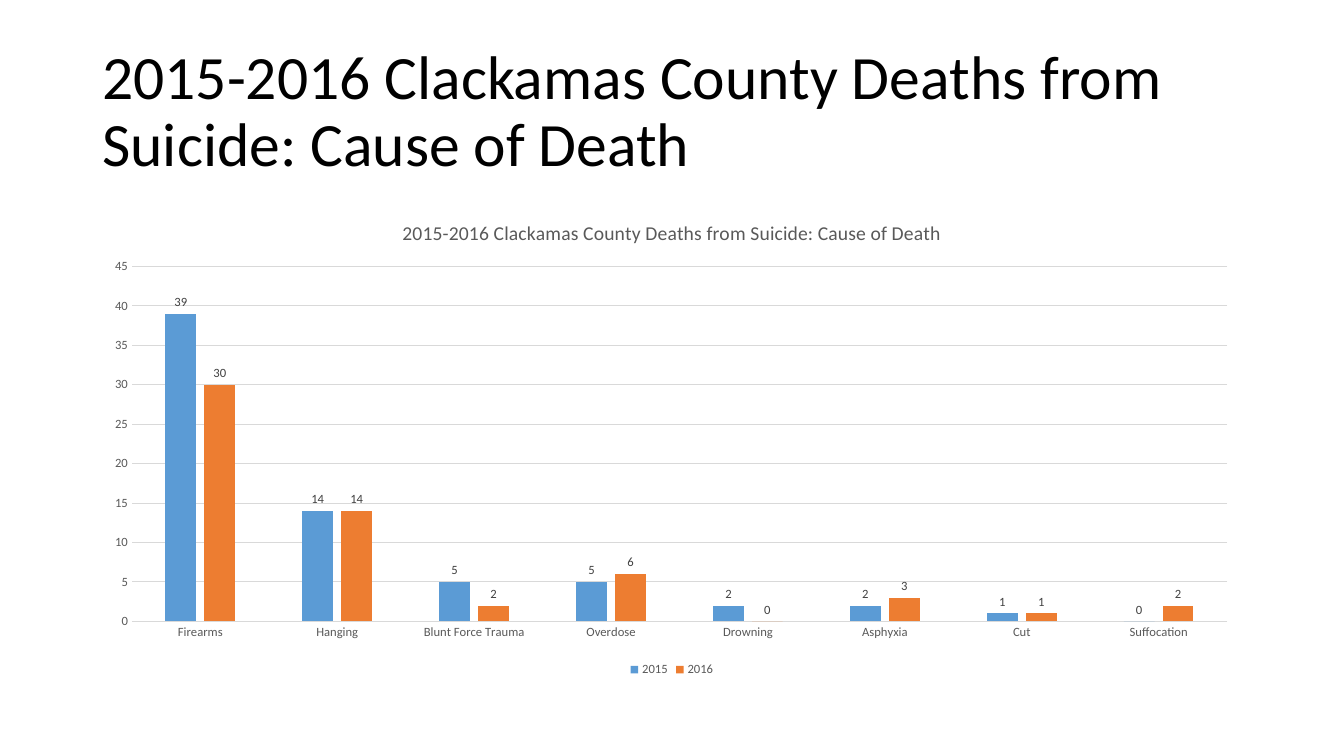
from dataclasses import dataclass

import pptx
import pptx.chart.data
import pptx.dml.color
import pptx.enum.chart
import pptx.enum.text
import pptx.oxml
import pptx.oxml.ns
import pptx.util
from pptx.util import Cm


@dataclass(frozen=True)
class Theme:
    font: str = "Calibri"
    ink: str = "000000"
    muted: str = "595959"
    label: str = "404040"
    rule: str = "D9D9D9"
    bars: tuple = ("5B9BD5", "ED7D31")
    heading_size: int = 44
    chart_title_size: int = 14
    chart_size: int = 10
    small_size: int = 9
    rule_width: float = 0.75


THEME = Theme()
HEADING = "2015-2016 Clackamas County Deaths from Suicide: Cause of Death"
CAUSES = ["Firearms", "Hanging", "Blunt Force Trauma", "Overdose",
          "Drowning", "Asphyxia", "Cut", "Suffocation"]
DEATHS = {
    "2015": [39, 14, 5, 5, 2, 2, 1, 0],
    "2016": [30, 14, 2, 6, 0, 3, 1, 2],
}
PLOT_AREA = {"x": 0.034, "y": 0.136, "w": 0.945, "h": 0.74}


def rgb(color):
    return pptx.dml.color.RGBColor.from_string(color)


def style_font(font, size, color):
    font.name = THEME.font
    font.size = pptx.util.Pt(size)
    font.bold = False
    font.color.rgb = rgb(color)


def write_text(frame, text, size, color, spacing=None):
    para = frame.paragraphs[0]
    para.line_spacing = spacing
    span = para.add_run()
    span.text = text
    style_font(span.font, size, color)


def rule_line(line):
    line.color.rgb = rgb(THEME.rule)
    line.width = pptx.util.Pt(THEME.rule_width)


def place_plot(chart, fractions):
    plot_area = chart.element.find(".//" + pptx.oxml.ns.qn("c:plotArea"))
    for layout in plot_area.findall(pptx.oxml.ns.qn("c:layout")):
        plot_area.remove(layout)
    sizes = "".join(f'<c:{key} val="{value}"/>' for key, value in fractions.items())
    plot_area.insert(0, pptx.oxml.parse_xml(
        f'<c:layout {pptx.oxml.ns.nsdecls("c")}><c:manualLayout>'
        '<c:layoutTarget val="inner"/><c:xMode val="edge"/><c:yMode val="edge"/>'
        f'{sizes}</c:manualLayout></c:layout>'))


def add_heading(page, left, top, width, height):
    box = page.shapes.add_textbox(left, top, width, height)
    frame = box.text_frame
    frame.word_wrap = True
    frame.vertical_anchor = pptx.enum.text.MSO_ANCHOR.MIDDLE
    write_text(frame, HEADING, size=THEME.heading_size, color=THEME.ink, spacing=0.9)


def style_axes(chart):
    for axis in (chart.category_axis, chart.value_axis):
        axis.major_tick_mark = pptx.enum.chart.XL_TICK_MARK.NONE
        axis.minor_tick_mark = pptx.enum.chart.XL_TICK_MARK.NONE
        style_font(axis.tick_labels.font, THEME.small_size, THEME.muted)
    rule_line(chart.category_axis.format.line)
    values = chart.value_axis
    values.minimum_scale, values.maximum_scale, values.major_unit = 0, 45, 5
    values.format.line.fill.background()
    values.has_major_gridlines = True
    rule_line(values.major_gridlines.format.line)


def style_bars(plot):
    plot.gap_width = 219
    plot.overlap = -27
    plot.vary_by_categories = False
    for series, color in zip(plot.series, THEME.bars):
        series.format.fill.solid()
        series.format.fill.fore_color.rgb = rgb(color)
        series.format.line.fill.background()
        series.invert_if_negative = False
        labels = series.data_labels
        labels.show_value = True
        labels.position = pptx.enum.chart.XL_LABEL_POSITION.OUTSIDE_END
        style_font(labels.font, THEME.small_size, THEME.label)


def add_deaths_chart(page, left, top, width, height):
    data = pptx.chart.data.CategoryChartData()
    data.categories = CAUSES
    for year, counts in DEATHS.items():
        data.add_series(year, counts)
    chart = page.shapes.add_chart(
        pptx.enum.chart.XL_CHART_TYPE.COLUMN_CLUSTERED,
        left, top, width, height, data).chart
    style_font(chart.font, THEME.chart_size, THEME.ink)
    chart.has_title = True
    write_text(chart.chart_title.text_frame, HEADING,
               size=THEME.chart_title_size, color=THEME.muted)
    chart.chart_title.include_in_layout = False
    chart.has_legend = True
    chart.legend.position = pptx.enum.chart.XL_LEGEND_POSITION.BOTTOM
    chart.legend.include_in_layout = False
    style_font(chart.legend.font, THEME.small_size, THEME.muted)
    style_axes(chart)
    style_bars(chart.plots[0])
    place_plot(chart, PLOT_AREA)


def main():
    deck = pptx.Presentation()
    deck.slide_width, deck.slide_height = Cm(33.87), Cm(19.05)
    page = deck.slides.add_slide(deck.slide_layouts[6])
    left, width = Cm(2.33), Cm(29.21)
    add_heading(page, left, Cm(1.01), width, Cm(3.68))
    add_deaths_chart(page, left, Cm(5.07), width, Cm(12.09))
    deck.save("out.pptx")


if __name__ == "__main__":
    main()
